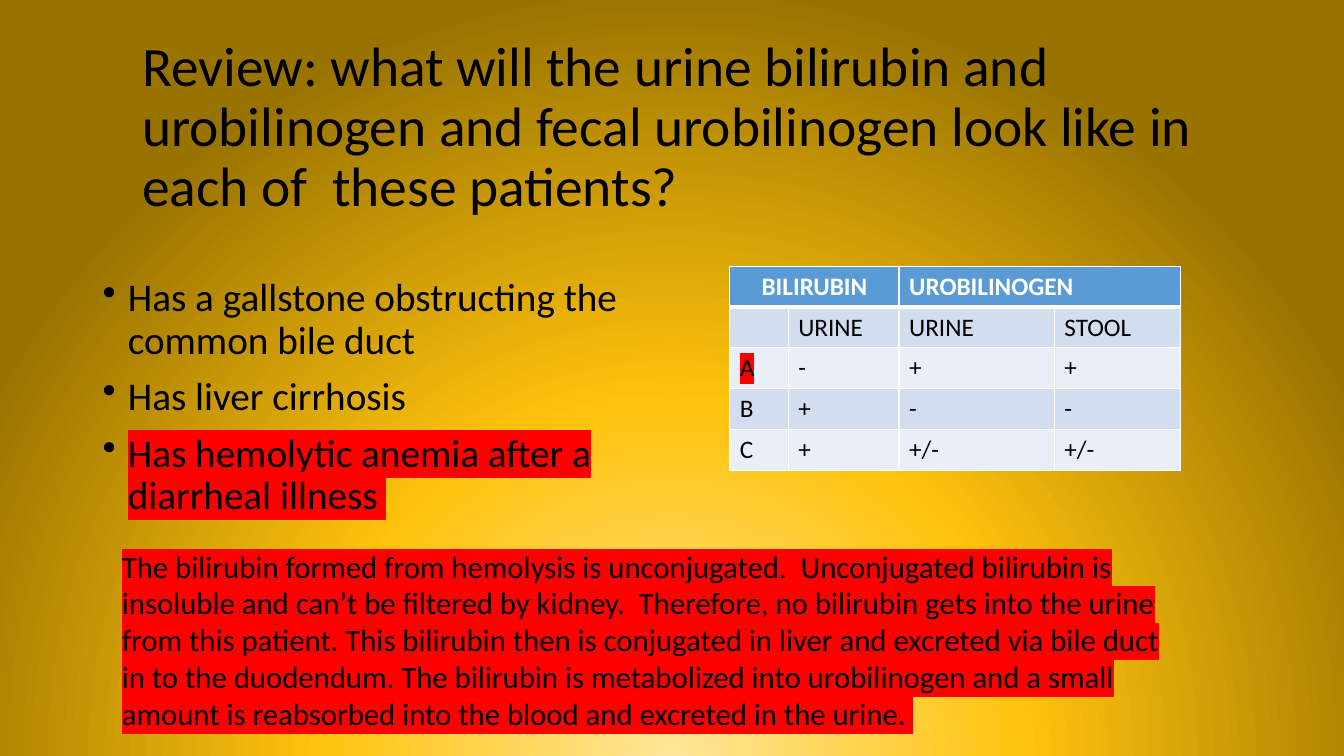
from dataclasses import dataclass

import pptx
import pptx.dml.color
import pptx.enum.text
import pptx.oxml
import pptx.oxml.ns
import pptx.oxml.xmlchemy
import pptx.util

WIDTH = pptx.util.Inches(13.333)
HEIGHT = pptx.util.Inches(7.5)
FONT = "Calibri"
BLACK, WHITE, RED = "000000", "FFFFFF", "FF0000"
HEADER, BAND_DARK, BAND_LIGHT = "5B9BD5", "D2DEEF", "EAEFF7"
GLOW = [(0, "FFE699"), (46, "FFC30D"), (100, "997300")]
GLOW_FOCUS = {"l": 50, "t": 130, "r": 50, "b": -30}

ANCHOR = pptx.enum.text.MSO_ANCHOR
AUTO_SIZE = pptx.enum.text.MSO_AUTO_SIZE
ALIGN = pptx.enum.text.PP_ALIGN


@dataclass(frozen=True)
class Area:
    column: float
    row: float
    columns: float
    rows: float


@dataclass(frozen=True)
class Block:
    area: Area
    lines: tuple[str, ...]
    size: float
    highlighted: str = ""
    spacing: float = 1.0
    bulleted: bool = False
    anchor: ANCHOR = ANCHOR.TOP
    fit: AUTO_SIZE = AUTO_SIZE.NONE


ANEMIA = "Has hemolytic anemia after a diarrheal illness "
EXPLANATION = (
    "The bilirubin formed from hemolysis is unconjugated.  Unconjugated bilirubin is "
    "insoluble and can’t be filtered by kidney.  Therefore, no bilirubin gets into the "
    "urine from this patient. This bilirubin then is conjugated in liver and excreted "
    "via bile duct in to the duodendum. The bilirubin is metabolized into urobilinogen "
    "and a small amount is reabsorbed into the blood and excreted in the urine. "
)
BLOCKS = [
    Block(
        Area(9.83, 7.33, 86.25, 19.33),
        ("Review: what will the urine bilirubin and urobilinogen and fecal "
         "urobilinogen look like in each of  these patients?",),
        39.6, spacing=0.9, anchor=ANCHOR.MIDDLE,
    ),
    Block(
        Area(6.9, 36.13, 42.53, 53.87),
        ("Has a gallstone obstructing the common bile duct", "Has liver cirrhosis", ANEMIA),
        28, highlighted=ANEMIA, spacing=0.9, bulleted=True,
    ),
    Block(
        Area(8.33, 71.73, 79.5, 31.47), (EXPLANATION,), 22,
        highlighted=EXPLANATION, fit=AUTO_SIZE.SHAPE_TO_FIT_TEXT,
    ),
]

TABLE_COLUMNS = (4.35, 8.25, 11.55, 9.38)
TABLE_ROW = 5.41
RESULTS = [
    ("BILIRUBIN", "", "UROBILINOGEN", ""),
    ("", "URINE", "URINE", "STOOL"),
    ("A", "-", "+", "+"),
    ("B", "+", "-", "-"),
    ("C", "+", "+/-", "+/-"),
]
TABLE_AREA = Area(54.3, 35.2, sum(TABLE_COLUMNS), TABLE_ROW * len(RESULTS))


def across(columns: float) -> int:
    return round(WIDTH * columns / 100)


def down(rows: float) -> int:
    return round(HEIGHT * rows / 100)


def place(area: Area) -> tuple[int, int, int, int]:
    return across(area.column), down(area.row), across(area.columns), down(area.rows)


def colour(code: str) -> pptx.dml.color.RGBColor:
    return pptx.dml.color.RGBColor.from_string(code)


def element(tag: str, **attributes: object):
    node = pptx.oxml.xmlchemy.OxmlElement(tag)
    for name, value in attributes.items():
        node.set(name, str(value))
    return node


def solid(tag: str, code: str, **attributes: object):
    node = element(tag, **attributes)
    fill = element("a:solidFill")
    fill.append(element("a:srgbClr", val=code))
    node.append(fill)
    return node


def write(para, text: str, *, size: float, ink: str = BLACK,
          bold: bool = False, highlight: str = "") -> None:
    span = para.add_run()
    span.text = text
    span.font.name = FONT
    span.font.size = pptx.util.Pt(size)
    span.font.bold = bold
    span.font.color.rgb = colour(ink)
    if highlight:
        marker = element("a:highlight")
        marker.append(element("a:srgbClr", val=highlight))
        span.font._element.find(pptx.oxml.ns.qn("a:solidFill")).addnext(marker)


def add_bullet(para) -> None:
    indent = pptx.util.Inches(0.25)
    properties = para._p.get_or_add_pPr()
    properties.set("marL", str(indent))
    properties.set("indent", str(-indent))
    properties.append(element("a:buChar", char="•"))


def paint_background(page) -> None:
    page.background.fill.gradient()
    gradient = page.element.find(".//" + pptx.oxml.ns.qn("a:gradFill"))
    for child in list(gradient):
        gradient.remove(child)
    stops = element("a:gsLst")
    for position, code in GLOW:
        stop = element("a:gs", pos=position * 1000)
        stop.append(element("a:srgbClr", val=code))
        stops.append(stop)
    circle = element("a:path", path="circle")
    focus = {side: share * 1000 for side, share in GLOW_FOCUS.items()}
    circle.append(element("a:fillToRect", **focus))
    gradient.extend([stops, circle])


def draw_block(page, block: Block) -> None:
    box = page.shapes.add_textbox(*place(block.area))
    frame = box.text_frame
    frame.word_wrap = True
    frame.auto_size = block.fit
    frame.vertical_anchor = block.anchor
    for index, line in enumerate(block.lines):
        para = frame.add_paragraph() if index else frame.paragraphs[0]
        para.line_spacing = block.spacing
        if block.bulleted:
            para.space_before = pptx.util.Pt(10)
            add_bullet(para)
        write(para, line, size=block.size,
              highlight=RED if line == block.highlighted else "")


def style_cell(cell, row: int) -> None:
    widths = {"L": 1, "R": 1, "T": 3 if row == 1 else 1, "B": 3 if row == 0 else 1}
    properties = cell._tc.get_or_add_tcPr()
    for side, width in widths.items():
        properties.append(solid(f"a:ln{side}", WHITE, w=pptx.util.Pt(width)))
    cell.fill.solid()
    band = BAND_DARK if row % 2 else BAND_LIGHT
    cell.fill.fore_color.rgb = colour(band if row else HEADER)


def draw_results(page) -> None:
    table = page.shapes.add_table(
        len(RESULTS), len(TABLE_COLUMNS), *place(TABLE_AREA)).table
    for column, width in zip(table.columns, TABLE_COLUMNS):
        column.width = across(width)
    for row, values in enumerate(RESULTS):
        table.rows[row].height = down(TABLE_ROW)
        for column, value in enumerate(values):
            cell = table.cell(row, column)
            style_cell(cell, row)
            if value:
                write(cell.text_frame.paragraphs[0], value, size=18,
                      ink=BLACK if row else WHITE, bold=row == 0,
                      highlight=RED if value == "A" else "")
    for column in (0, 2):
        table.cell(0, column).merge(table.cell(0, column + 1))
    table.cell(0, 0).text_frame.paragraphs[0].alignment = ALIGN.CENTER


def main() -> None:
    deck = pptx.Presentation()
    deck.slide_width, deck.slide_height = WIDTH, HEIGHT
    page = deck.slides.add_slide(deck.slide_layouts[6])
    paint_background(page)
    for block in BLOCKS:
        draw_block(page, block)
    draw_results(page)
    deck.save("out.pptx")


if __name__ == "__main__":
    main()
